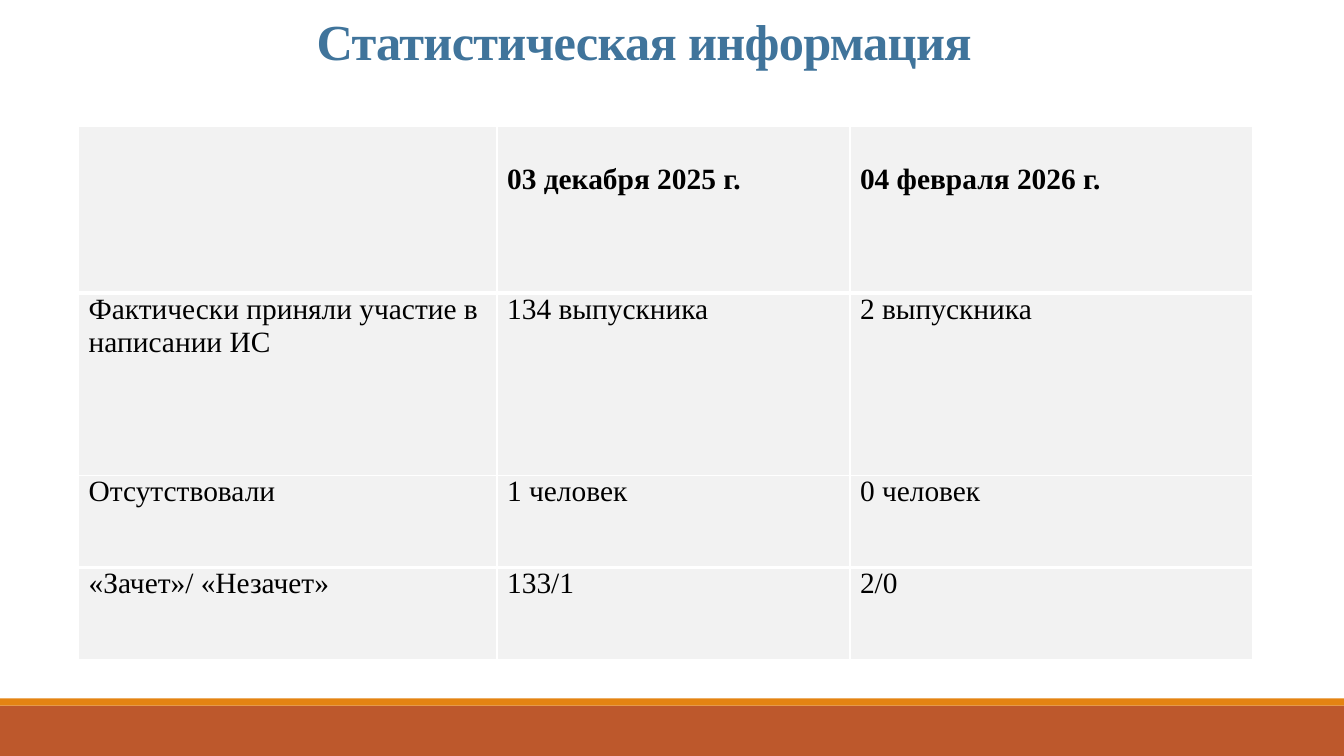
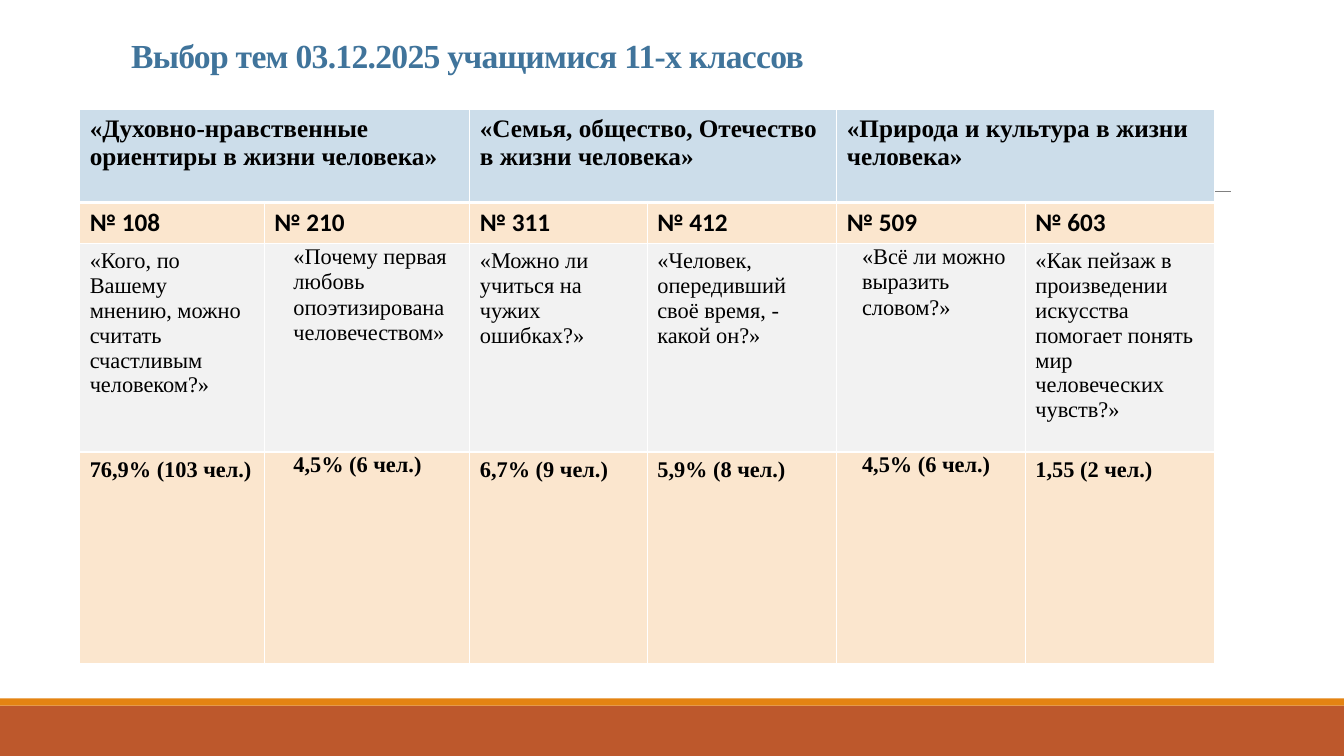
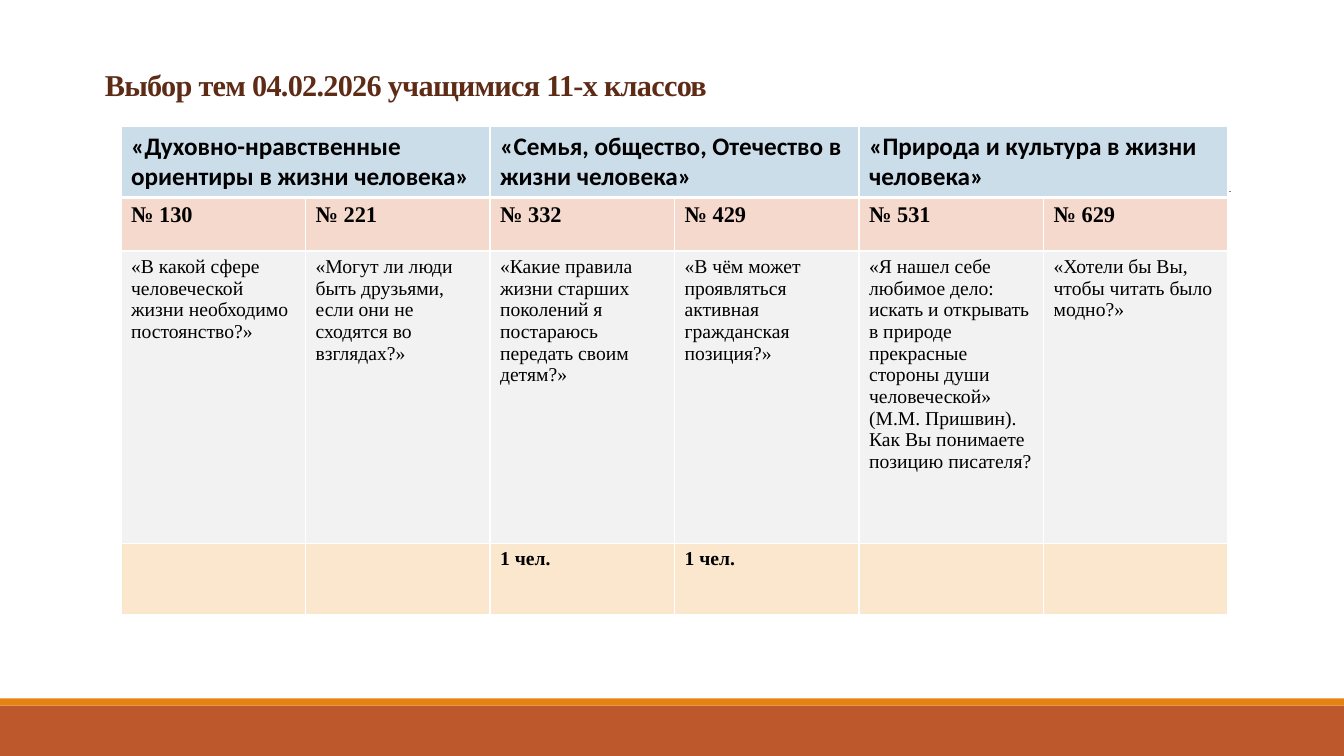
from dataclasses import dataclass, field

from lxml import etree
from pptx import Presentation
from pptx.dml.color import RGBColor
from pptx.enum import shapes, text
from pptx.oxml.ns import qn
from pptx.util import Inches, Pt

COLORS = {
    "rust": "BD582C",
    "orange": "E48312",
    "gray": "808080",
    "blue": "40749B",
    "brown": "5E2C16",
    "black": "000000",
    "white": "FFFFFF",
    "pale_gray": "F2F2F2",
    "pale_blue": "CCDDEA",
    "pale_orange": "FBE6CE",
    "pale_rust": "F5D9CC",
}
SERIF = "Times New Roman"
SANS = "Calibri"
THIN, THICK = 1, 3
THEMES = [
    "«Духовно-нравственные ориентиры в жизни человека»",
    "«Семья, общество, Отечество в жизни человека»",
    "«Природа и культура в жизни человека»",
]


@dataclass
class Row:
    """One table row; indents maps a column to its wider left margin."""
    height: float
    texts: list
    fill: str = "pale_gray"
    size: float = 18
    bold: bool = False
    font: str = SERIF
    span: int = 1
    top: float = 0.05
    rule: int = THIN
    indents: dict = field(default_factory=dict)


def rgb(name):
    return RGBColor.from_string(COLORS[name])


def add_run(p, content, size, color, bold, font=SERIF):
    r = p.add_run()
    r.text = content
    r.font.name = font
    r.font.size = Pt(size)
    r.font.bold = bold
    r.font.color.rgb = rgb(color)
    return r


def add_band(s, top, height, color):
    sp = s.shapes.add_shape(shapes.MSO_SHAPE.RECTANGLE, 0, Inches(top),
                            Inches(13.33), Inches(height))
    sp.shadow.inherit = False
    sp.fill.solid()
    sp.fill.fore_color.rgb = rgb(color)
    sp.line.fill.background()
    return sp


def add_rule(s, x1, x2, y):
    cn = s.shapes.add_connector(shapes.MSO_CONNECTOR.STRAIGHT, Inches(x1),
                                Inches(y), Inches(x2), Inches(y))
    cn.line.color.rgb = rgb("gray")
    cn.line.width = Pt(0.5)
    etree.SubElement(cn.element.spPr, qn("a:effectLst"))
    return cn


def move_to_layout(layout, items):
    """Put the shared shapes behind the layout's title, for every slide."""
    for ph in list(layout.placeholders):
        if ph.placeholder_format.idx != 0:
            ph.element.getparent().remove(ph.element)
    tree = layout.shapes.element
    for i, item in enumerate(items):
        tree.insert(2 + i, item.element)


def set_title(s, content, box, size, color):
    sp = s.shapes.title
    sp.left, sp.top, sp.width, sp.height = map(Inches, box)
    tf = sp.text_frame
    tf.word_wrap = True
    tf.auto_size = text.MSO_AUTO_SIZE.NONE
    tf.vertical_anchor = text.MSO_ANCHOR.BOTTOM
    p = tf.paragraphs[0]
    p.alignment = text.PP_ALIGN.LEFT
    p.line_spacing = 0.85
    r = add_run(p, content, size, color, True)
    r.font._element.set("spc", "-50")


def set_borders(cell, top, bottom):
    tcPr = cell._tc.get_or_add_tcPr()
    for side, width in zip("LRTB", (THIN, THIN, top, bottom)):
        ln = etree.SubElement(tcPr, qn(f"a:ln{side}"), w=str(Pt(width)))
        fill = etree.SubElement(ln, qn("a:solidFill"))
        etree.SubElement(fill, qn("a:srgbClr"), val=COLORS["white"])


def fill_cell(cell, content, row, col):
    indented = col in row.indents
    cell.margin_left = Inches(row.indents.get(col, 0.1))
    cell.margin_right = Inches(0.12 if indented else 0.1)
    cell.margin_top = Inches(0 if indented else row.top)
    cell.margin_bottom = Inches(0 if indented else 0.05)
    if content:
        p = cell.text_frame.paragraphs[0]
        if indented:
            p.line_spacing = 1.03
        add_run(p, content, row.size, "black", row.bold, row.font)


def add_grid(s, left, top, widths, rows):
    height = sum(row.height for row in rows)
    tbl = s.shapes.add_table(len(rows), len(widths), Inches(left), Inches(top),
                             Inches(sum(widths)), Inches(height)).table
    tbl.first_row = tbl.horz_banding = False
    for col, width in zip(tbl.columns, widths):
        col.width = Inches(width)
    rule_above = THIN
    for i, row in enumerate(rows):
        tbl.rows[i].height = Inches(row.height)
        for j in range(len(widths)):
            cell = tbl.cell(i, j)
            set_borders(cell, rule_above, row.rule)
            cell.fill.solid()
            cell.fill.fore_color.rgb = rgb(row.fill)
        for k, content in enumerate(row.texts):
            j = k * row.span
            if row.span > 1:
                tbl.cell(i, j).merge(tbl.cell(i, j + row.span - 1))
            fill_cell(tbl.cell(i, j), content, row, j)
        rule_above = row.rule


def theme_row(height, font):
    return Row(height, THEMES, "pale_blue", bold=True, font=font, span=2,
               rule=THICK)


def number_row(height, numbers, **style):
    return Row(height, [f"№ {n}" for n in numbers], bold=True, **style)


def fill_statistics(s):
    set_title(s, "Статистическая информация", (3.04, 0.1, 9.38, 0.65),
              36, "blue")
    plain = dict(size=21, top=0)
    add_grid(s, 0.78, 1.25, [4.15, 3.5, 3.99], [
        Row(1.66, ["", "03 декабря 2025 г.", "04 февраля 2026 г."],
            size=21, bold=True, top=0.37, rule=THICK),
        Row(1.81, ["Фактически приняли участие в написании ИС",
                   "134 выпускника", "2 выпускника"], **plain),
        Row(0.91, ["Отсутствовали", "1 человек", "0 человек"],
            rule=THICK, **plain),
        Row(0.91, ["«Зачет»/ «Незачет»", "133/1", "2/0"], **plain),
    ])


def fill_december(s):
    set_title(s, "Выбор тем 03.12.2025 учащимися 11-х классов",
              (1.2, 0.31, 11, 0.49), 24, "blue")
    indents = {1: 0.29, 4: 0.25}
    add_grid(s, 0.79, 1.09, [1.83, 2.04, 1.76, 1.88, 1.87, 1.88], [
        theme_row(0.92, SERIF),
        number_row(0.4, [108, 210, 311, 412, 509, 603],
                   fill="pale_orange", font=SANS),
        Row(2.07, [
            "«Кого, по Вашему мнению, можно считать счастливым человеком?»",
            "«Почему первая любовь опоэтизирована человечеством»",
            "«Можно ли учиться на чужих ошибках?»",
            "«Человек, опередивший своё время, - какой он?»",
            "«Всё ли можно выразить словом?»",
            "«Как пейзаж в произведении искусства помогает понять мир "
            "человеческих чувств?»",
        ], size=16, indents=indents),
        Row(2.1, ["76,9% (103 чел.)", "4,5% (6 чел.)", "6,7% (9 чел.)",
                  "5,9% (8 чел.)", "4,5% (6 чел.)", "1,55 (2 чел.)"],
            "pale_orange", 16, True, indents=indents),
    ])


def fill_february(s):
    set_title(s, "Выбор тем 04.02.2026 учащимися 11-х классов",
              (0.94, 0.64, 10.95, 0.43), 21.6, "brown")
    add_grid(s, 1.2, 1.25, [1.83] * 6, [
        theme_row(0.7, SANS),
        number_row(0.53, [130, 221, 332, 429, 531, 629],
                   fill="pale_rust", size=16),
        Row(2.9, [
            "«В какой сфере человеческой жизни необходимо постоянство?»",
            "«Могут ли люди быть друзьями, если они не сходятся во взглядах?»",
            "«Какие правила жизни старших поколений я постараюсь передать "
            "своим детям?»",
            "«В чём может проявляться активная гражданская позиция?»",
            "«Я нашел себе любимое дело: искать и открывать в природе "
            "прекрасные стороны души человеческой» (М.М. Пришвин). "
            "Как Вы понимаете позицию писателя?",
            "«Хотели бы Вы, чтобы читать было модно?»",
        ], size=14),
        Row(0.71, ["", "", "1 чел.", "1 чел.", "", ""],
            "pale_orange", 14, True),
    ])


def main():
    prs = Presentation()
    prs.slide_width, prs.slide_height = Inches(13.33), Inches(7.5)
    layout = prs.slide_layouts[5]
    slides = [prs.slides.add_slide(layout) for _ in range(3)]
    first = slides[0]
    move_to_layout(layout, [
        add_band(first, 7, 0.5, "rust"),
        add_band(first, 6.93, 0.07, "orange"),
        add_rule(first, 1.31, 12.21, 1.9),
    ])
    for s, fill in zip(slides, (fill_statistics, fill_december, fill_february)):
        fill(s)
    prs.save("out.pptx")


if __name__ == "__main__":
    main()
